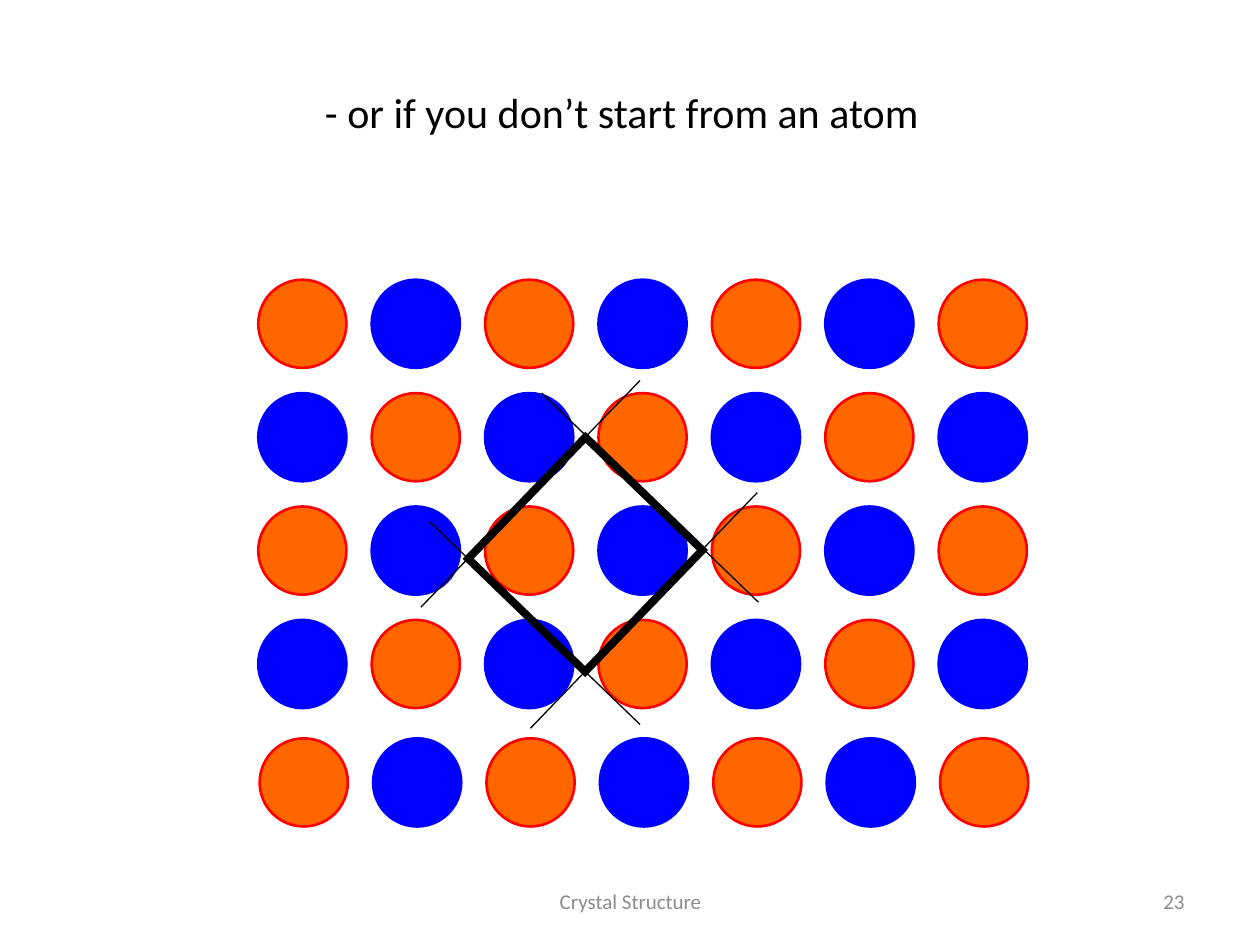
from lxml import etree
from pptx import Presentation
from pptx.dml.color import RGBColor
from pptx.enum.shapes import MSO_CONNECTOR, MSO_SHAPE
from pptx.enum.text import MSO_ANCHOR, PP_ALIGN
from pptx.oxml.ns import qn
from pptx.util import Pt

OVAL, RECT = MSO_SHAPE.OVAL, MSO_SHAPE.RECTANGLE
STRAIGHT = MSO_CONNECTOR.STRAIGHT
MIDDLE = MSO_ANCHOR.MIDDLE
CENTER, RIGHT = PP_ALIGN.CENTER, PP_ALIGN.RIGHT

COLORS = {
    "black": "000000",
    "gray": "8C8C8C",
    "orange": "FF6600",
    "red": "FF0000",
    "blue": "0000FF",
}
ATOMS = [("orange", "red"), ("blue", "blue")]
COLUMNS = 7
LEFT, PITCH, DIAMETER = 147.6, 64.8, 50.4
ROWS = [(LEFT, 159.84 + row * PITCH) for row in range(4)] + [(148.4, 421.92)]
CELL_LINES = [
    (365.76, 217.44, 240.48, 347.04),
    (432.72, 281.52, 303.12, 416.16),
    (309.6, 224.64, 433.44, 344.16),
    (245.52, 298.08, 365.76, 414),
]


class Deck:
    font = "Calibri"

    def __init__(self, width, height):
        self.prs = Presentation()
        self.prs.slide_width, self.prs.slide_height = Pt(width), Pt(height)
        self.s = None

    def add_slide(self):
        self.s = self.prs.slides.add_slide(self.prs.slide_layouts[6])

    def color(self, name):
        return RGBColor.from_string(COLORS[name])

    def text(self, text, x, y, w, h, size, color, align):
        tb = self.s.shapes.add_textbox(Pt(x), Pt(y), Pt(w), Pt(h))
        tf = tb.text_frame
        tf.word_wrap = True
        tf.vertical_anchor = MIDDLE
        tf.text = text
        p = tf.paragraphs[0]
        p.alignment = align
        r = p.runs[0]
        r.font.name, r.font.size = self.font, Pt(size)
        r.font.color.rgb = self.color(color)

    def shape(self, kind, x, y, w, h, line, weight, fill=None, rotation=0):
        sp = self.s.shapes.add_shape(kind, Pt(x), Pt(y), Pt(w), Pt(h))
        sp.shadow.inherit = False
        sp.rotation = rotation
        if fill:
            sp.fill.solid()
            sp.fill.fore_color.rgb = self.color(fill)
        else:
            sp.fill.background()
        sp.line.color.rgb = self.color(line)
        sp.line.width = Pt(weight)
        ln = sp.element.spPr.find(qn("a:ln"))
        etree.SubElement(ln, qn("a:miter"), lim="800000")

    def line(self, x1, y1, x2, y2, color, weight):
        cn = self.s.shapes.add_connector(STRAIGHT, Pt(x1), Pt(y1), Pt(x2), Pt(y2))
        cn.line.color.rgb = self.color(color)
        cn.line.width = Pt(weight)
        etree.SubElement(cn.element.spPr, qn("a:effectLst"))


def main():
    deck = Deck(720, 540)
    deck.add_slide()
    deck.text("Crystal Structure", 246.24, 500.4, 228.24, 28.8, 12, "gray", CENTER)
    deck.text("23", 516.24, 500.4, 167.76, 28.8, 12, "gray", RIGHT)
    deck.text("- or if you don’t start from an atom",
              73.44, 7.92, 563.76, 111.6, 24, "black", CENTER)
    for row, (left, top) in enumerate(ROWS):
        for col in range(COLUMNS):
            fill, line = ATOMS[(row + col) % 2]
            deck.shape(OVAL, left + col * PITCH, top, DIAMETER, DIAMETER,
                       line, 1.5, fill)
    for ends in CELL_LINES:
        deck.line(*ends, "black", 0.75)
    deck.shape(RECT, 288, 268.56, 92.88, 96.48, "black", 4.5, rotation=44)
    deck.prs.save("out.pptx")


if __name__ == "__main__":
    main()
